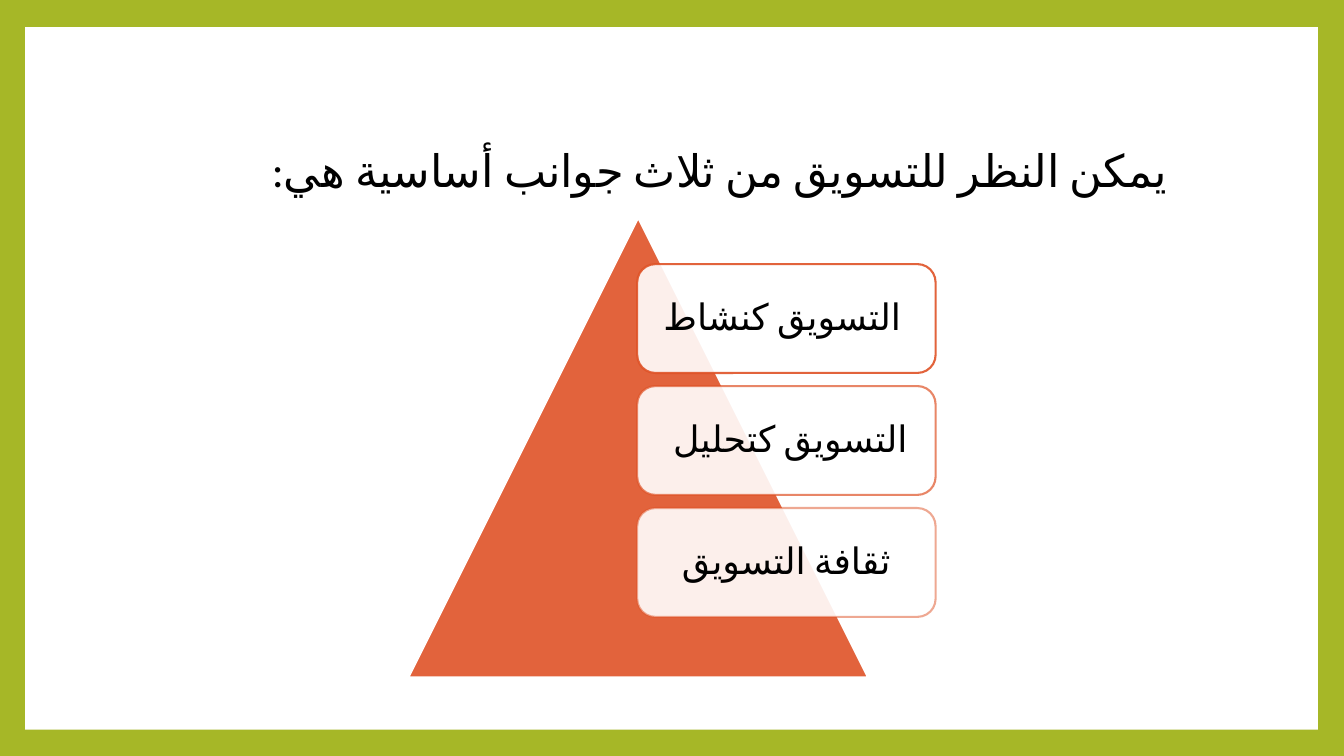
from lxml.etree import SubElement
from pptx import Presentation
from pptx.dml.color import RGBColor
from pptx.enum.lang import MSO_LANGUAGE_ID
from pptx.enum.shapes import MSO_SHAPE
from pptx.enum.text import MSO_ANCHOR, PP_ALIGN
from pptx.oxml.ns import qn
from pptx.util import Inches, Pt


def paint(color_format, color, alpha=100):
    """Set a fill, line or font colour from a hex string, with opacity in percent."""
    color_format.fill.solid()
    color_format.fill.fore_color.rgb = RGBColor.from_string(color)
    if alpha < 100:
        clr = color_format.fill._xPr.find(".//" + qn("a:srgbClr"))
        SubElement(clr, qn("a:alpha"), val=str(alpha * 1000))


def write(tf, text, size, align, spacing, after, rtl=True):
    tf.word_wrap = True
    p = tf.paragraphs[0]
    p.text = text
    p.alignment = align
    p.line_spacing = spacing
    p.space_after = Pt(after)
    if rtl:
        p._p.get_or_add_pPr().set("rtl", "1")
    p.font.size = Pt(size)
    p.font.name = "Calibri"
    paint(p.font, "000000")
    SubElement(p.font._rPr, qn("a:cs"), typeface="Calibri")
    p.runs[0].font.language_id = MSO_LANGUAGE_ID.ARABIC


prs = Presentation()
prs.slide_width, prs.slide_height = Inches(13.33), Inches(7.5)
s = prs.slides.add_slide(prs.slide_layouts[6])
s.background.fill.solid()
s.background.fill.fore_color.rgb = RGBColor.from_string("A6B727")

panel = s.shapes.add_shape(MSO_SHAPE.RECTANGLE, Inches(0.25), Inches(0.27),
                           Inches(12.82), Inches(6.97))
panel.shadow.inherit = False
paint(panel, "FFFFFF")
panel.line.fill.background()

title = s.shapes.add_textbox(Inches(2.27), Inches(1.33), Inches(9.41), Inches(0.68))
write(title.text_frame, "يمكن النظر للتسويق من ثلاث جوانب أساسية هي:", 32,
      PP_ALIGN.RIGHT, 1.07, 8)

triangle = s.shapes.add_shape(MSO_SHAPE.ISOSCELES_TRIANGLE, Inches(4.05), Inches(2.16),
                              Inches(4.56), Inches(4.56))
triangle.shadow.inherit = False
paint(triangle, "DF5327", 90)
paint(triangle.line, "FFFFFF")
triangle.line.width = Pt(1.5)

# Each aspect: text, opacity of the outline, right-to-left paragraph
aspects = [("التسويق كنشاط ", 90, False),
           ("التسويق كتحليل ", 70, True),
           ("ثقافة التسويق", 50, True)]
for i, (text, alpha, rtl) in enumerate(aspects):
    sp = s.shapes.add_shape(MSO_SHAPE.ROUNDED_RECTANGLE, Inches(6.32),
                            Inches(2.62 + 1.21 * i), Inches(2.96), Inches(1.08))
    sp.shadow.inherit = False
    paint(sp, "FFFFFF", 90)
    paint(sp.line, "DF5327", alpha)
    sp.line.width = Pt(1.5)
    tf = sp.text_frame
    tf.margin_left = tf.margin_right = tf.margin_top = tf.margin_bottom = Inches(0.11)
    tf.vertical_anchor = MSO_ANCHOR.MIDDLE
    write(tf, text, 26, PP_ALIGN.CENTER, 0.9, 9, rtl)

prs.save("out.pptx")
